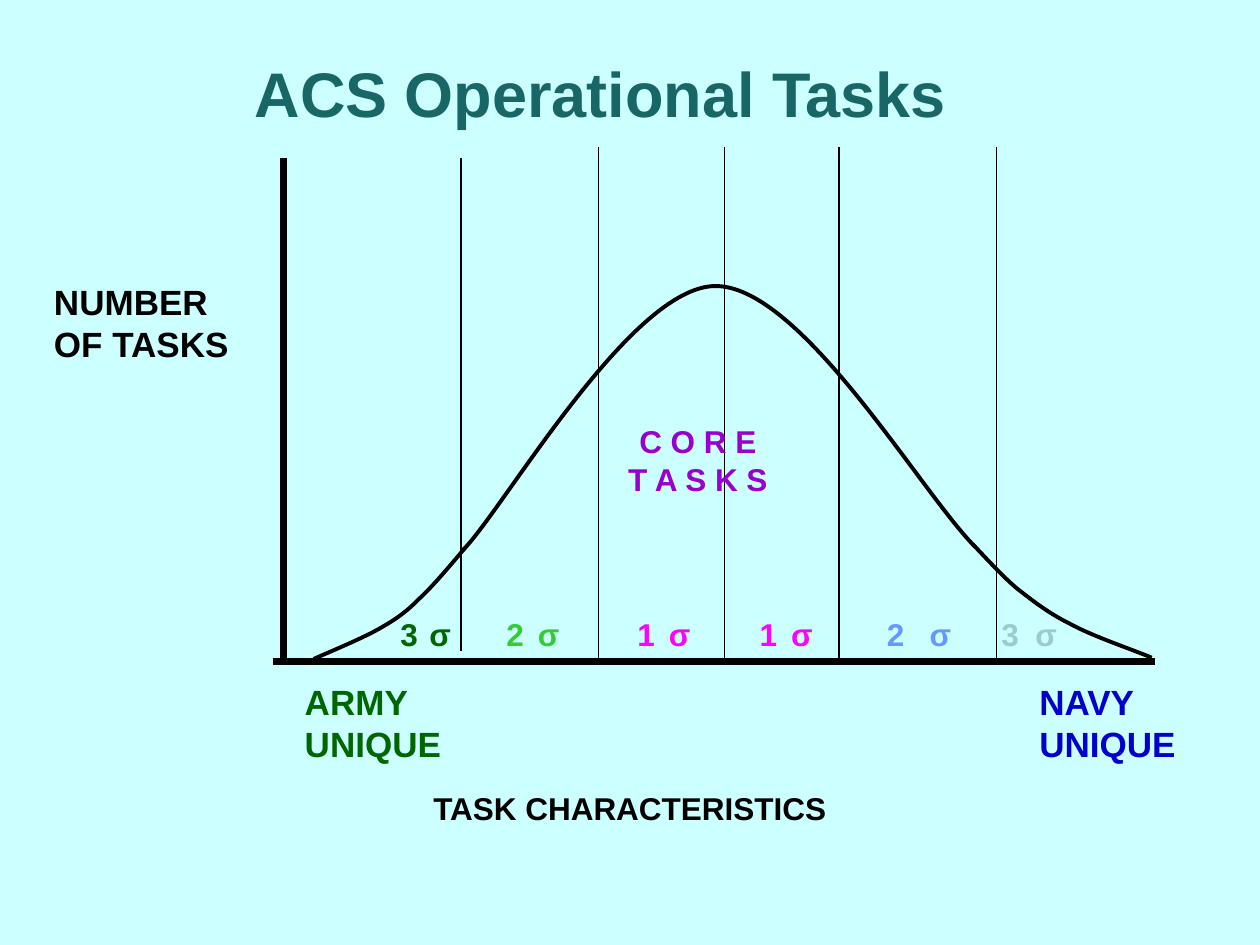
from lxml import etree
from pptx import Presentation
from pptx.dml.color import RGBColor
from pptx.enum.shapes import MSO_CONNECTOR
from pptx.enum.text import MSO_ANCHOR, MSO_AUTO_SIZE, PP_ALIGN
from pptx.oxml.ns import qn
from pptx.util import Inches, Pt

PEAK = [
    (3.68, 4.36), (4.01, 4.02), (5.01, 2.27), (5.68, 2.27),
    (6.36, 2.27), (7.31, 3.91), (7.74, 4.34),
]
RIGHT_TAIL = [
    (7.72, 4.32), (7.78, 4.38), (7.94, 4.56), (8.07, 4.67),
    (8.2, 4.77), (8.31, 4.86), (8.49, 4.95),
    (8.67, 5.05), (9, 5.16), (9.14, 5.22),
]
LEFT_TAIL = [
    (3.69, 4.35), (3.63, 4.42), (3.45, 4.64), (3.33, 4.75),
    (3.22, 4.86), (3.15, 4.91), (3.01, 4.99),
    (2.87, 5.07), (2.6, 5.18), (2.49, 5.23),
]
SIGMAS = [
    (4.17, "33CC33"), (3.31, "006600"), (6.18, "FF00FF"),
    (7.28, "6699FF"), (8.12, "99CCCC"), (5.21, "FF00FF"),
]
NUMBERS = [
    ("3", 3.08, "006600"), ("2", 3.92, "33CC33"), ("1", 4.96, "FF00FF"),
    ("1", 5.93, "FF00FF"), ("2", 6.94, "6699FF"), ("3", 7.85, "99CCCC"),
]


def color(hex_string):
    return RGBColor.from_string(hex_string)


def style(frame, size, hex_string, align=PP_ALIGN.LEFT):
    for paragraph in frame.paragraphs:
        paragraph.alignment = align
        paragraph.font.name = "Arial"
        paragraph.font.size = Pt(size)
        paragraph.font.bold = True
        paragraph.font.color.rgb = color(hex_string)


def add_title(slide, text):
    title = slide.shapes.title
    title.left, title.top = Inches(1.92), Inches(0.38)
    title.width, title.height = Inches(5.75), Inches(0.71)
    frame = title.text_frame
    frame.text = text
    frame.word_wrap = False
    frame.auto_size = MSO_AUTO_SIZE.NONE
    frame.vertical_anchor = MSO_ANCHOR.TOP
    style(frame, 36, "196666")


def add_label(slide, text, left, top, width, height, size, hex_string):
    label = slide.shapes.add_textbox(
        Inches(left), Inches(top), Inches(width), Inches(height))
    frame = label.text_frame
    frame.text = text
    frame.word_wrap = False
    style(frame, size, hex_string)
    return frame


def add_line(slide, start, end, weight):
    line = slide.shapes.add_connector(
        MSO_CONNECTOR.STRAIGHT, *map(Inches, start + end))
    line.line.color.rgb = color("000000")
    line.line.width = Pt(weight)
    etree.SubElement(line._element.spPr, qn("a:effectLst"))


def add_curve(slide, control_points):
    start, *others = [(Inches(x), Inches(y)) for x, y in control_points]
    builder = slide.shapes.build_freeform(*start)
    builder.add_line_segments(others, close=False)
    curve = builder.convert_to_shape()
    segments = list(curve._element.iter(qn("a:lnTo")))
    for first in range(0, len(segments), 3):
        bezier = etree.Element(qn("a:cubicBezTo"))
        segments[first].addprevious(bezier)
        for segment in segments[first:first + 3]:
            bezier.append(segment[0])
            segment.getparent().remove(segment)
    curve.shadow.inherit = False
    curve.fill.background()
    curve.line.color.rgb = color("000000")
    curve.line.width = Pt(2.25)


def main():
    presentation = Presentation()
    presentation.slide_width, presentation.slide_height = Inches(10), Inches(7.5)
    slide = presentation.slides.add_slide(presentation.slide_layouts[5])
    slide.background.fill.solid()
    slide.background.fill.fore_color.rgb = color("CCFFFF")

    add_title(slide, "ACS Operational Tasks")

    add_line(slide, (2.25, 1.25), (2.25, 5.25), 4.5)
    add_line(slide, (2.17, 5.25), (9.17, 5.25), 4.5)
    for boundary in (5.75, 6.66, 4.75):
        add_line(slide, (boundary, 1.17), (boundary, 5.25), 0.75)
    add_line(slide, (3.66, 1.25), (3.66, 5.17), 0.75)
    add_line(slide, (7.91, 1.17), (7.91, 5.25), 0.75)

    add_label(slide, "ARMY\nUNIQUE", 2.32, 5.35, 1.28, 0.77, 20, "006600")
    add_label(slide, "NAVY\nUNIQUE", 8.15, 5.35, 1.28, 0.77, 20, "0000CC")
    core = add_label(slide, "C O R E\nT A S K S", 4.82, 3.3, 1.93, 0.9, 18, "9900CC")
    core.word_wrap = True
    core.margin_right = Inches(0.59)
    style(core, 18, "9900CC", PP_ALIGN.CENTER)
    add_label(slide, "NUMBER\nOF TASKS", 0.33, 2.18, 2.01, 0.77, 20, "000000")
    add_label(slide, "TASK CHARACTERISTICS", 3.34, 6.21, 4.39, 0.5, 18, "000000")

    for left, hex_string in SIGMAS:
        add_label(slide, "σ", left, 4.83, 0.37, 0.4, 18, hex_string)
    for number, left, hex_string in NUMBERS:
        add_label(slide, number, left, 4.83, 0.34, 0.4, 18, hex_string)

    for control_points in (PEAK, RIGHT_TAIL, LEFT_TAIL):
        add_curve(slide, control_points)

    presentation.save("out.pptx")


if __name__ == "__main__":
    main()
